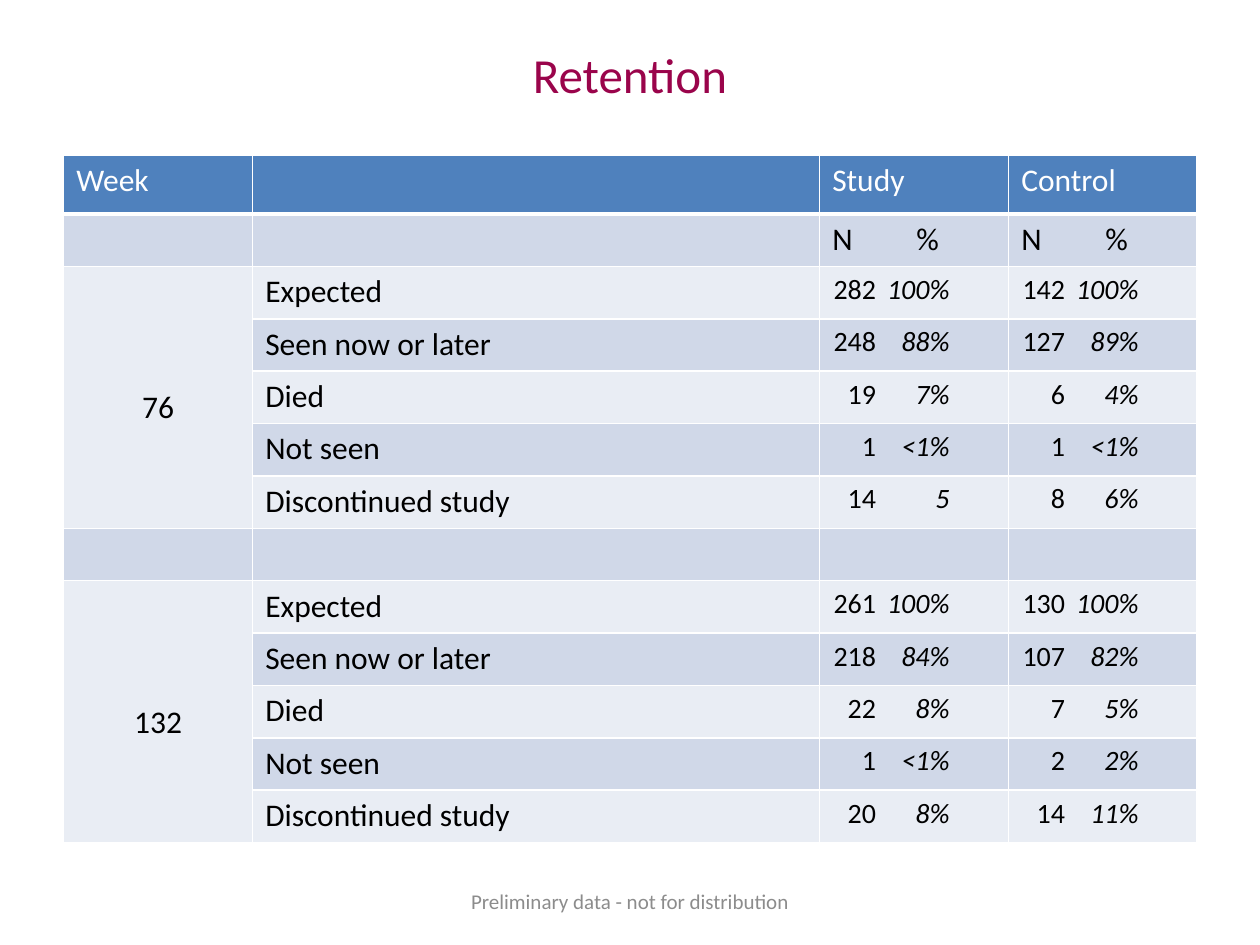
import pptx
import pptx.util
import pptx.dml.color
import pptx.enum.text
import pptx.oxml
import pptx.oxml.ns

Pt = pptx.util.Pt
Align = pptx.enum.text.PP_ALIGN
Anchor = pptx.enum.text.MSO_ANCHOR

FONT = "Calibri"
BLACK, WHITE = "000000", "FFFFFF"
HEADER_FILL = "4F81BD"
BAND_FILLS = ["E9EDF4", "D0D8E8"]
HEADER_HEIGHT, ROW_HEIGHT = 33.7, 29.95
COLUMN_SHARES = [1.5, 4.5, 1.5, 1.49]
NUMBER_STOPS = [(25, "r"), (67, "r")]
HEADING_STOPS = [(48, "l")]

OUTCOMES = ["Expected", "Seen now or later", "Died", "Not seen", "Discontinued study"]
WEEKS = {
    "76": (
        [("282", "100%"), ("248", "88%"), ("19", "7%"), ("1", "<1%"), ("14", "5")],
        [("142", "100%"), ("127", "89%"), ("6", "4%"), ("1", "<1%"), ("8", "6%")],
    ),
    "132": (
        [("261", "100%"), ("218", "84%"), ("22", "8%"), ("1", "<1%"), ("20", "8%")],
        [("130", "100%"), ("107", "82%"), ("7", "5%"), ("2", "2%"), ("14", "11%")],
    ),
}


def color(value):
    return pptx.dml.color.RGBColor.from_string(value)


def style(para, size, ink, align=Align.LEFT):
    para.alignment = align
    para.font.name = FONT
    para.font.size = Pt(size)
    para.font.bold = False
    para.font.color.rgb = color(ink)


def add_line(page, box, text, size, ink, anchor):
    shape = page.shapes.add_textbox(*(Pt(length) for length in box))
    frame = shape.text_frame
    frame.word_wrap = True
    frame.vertical_anchor = anchor
    para = frame.paragraphs[0]
    para.text = text
    style(para, size, ink, Align.CENTER)


def set_stops(para, stops):
    tabs = "".join(f'<a:tab pos="{Pt(pos)}" algn="{side}"/>' for pos, side in stops)
    namespace = pptx.oxml.ns.nsdecls("a")
    tab_list = pptx.oxml.parse_xml(f"<a:tabLst {namespace}>{tabs}</a:tabLst>")
    para._p.get_or_add_pPr().append(tab_list)


def dress_cell(cell, fill, top, bottom):
    properties = cell._tc.get_or_add_tcPr()
    for side, width in (("L", 1), ("R", 1), ("T", top), ("B", bottom)):
        properties.append(pptx.oxml.parse_xml(
            f'<a:ln{side} {pptx.oxml.ns.nsdecls("a")} w="{Pt(width)}"><a:solidFill>'
            f'<a:srgbClr val="{WHITE}"/></a:solidFill></a:ln{side}>'))
    cell.fill.solid()
    cell.fill.fore_color.rgb = color(fill)


def write(cell, text, ink=BLACK, align=Align.LEFT):
    para = cell.text_frame.paragraphs[0]
    para.text = text
    style(para, 18, ink, align)
    return para


def write_count(cell, count, percent):
    para = cell.text_frame.paragraphs[0]
    style(para, 16, BLACK)
    set_stops(para, NUMBER_STOPS)
    para.add_run().text = f"\t{count}\t"
    span = para.add_run()
    span.text = percent
    span.font.italic = True


def write_week(table, first, week, arms):
    last = first + len(OUTCOMES) - 1
    label = table.cell(first, 0)
    label.merge(table.cell(last, 0))
    label.vertical_anchor = Anchor.MIDDLE
    label.margin_top = Pt(16)
    write(label, week, align=Align.CENTER)
    for offset, outcome in enumerate(OUTCOMES):
        write(table.cell(first + offset, 1), outcome)
        for column, counts in enumerate(arms, start=2):
            write_count(table.cell(first + offset, column), *counts[offset])


def add_retention_table(page, box):
    block = len(OUTCOMES) + 1
    row_count = 1 + block * len(WEEKS)
    frame = page.shapes.add_table(
        row_count, len(COLUMN_SHARES), *(Pt(length) for length in box))
    table = frame.table
    for column, share in zip(table.columns, COLUMN_SHARES):
        column.width = Pt(box[2] * share / sum(COLUMN_SHARES))
    for index, row in enumerate(table.rows):
        row.height = Pt(ROW_HEIGHT if index else HEADER_HEIGHT)
        for cell in row.cells:
            fill = BAND_FILLS[index % 2] if index else HEADER_FILL
            dress_cell(cell, fill, 3 if index == 1 else 1, 1 if index else 3)
    for column, heading in ((0, "Week"), (2, "Study"), (3, "Control")):
        write(table.cell(0, column), heading, WHITE)
    for column in (2, 3):
        set_stops(write(table.cell(1, column), "N\t%"), HEADING_STOPS)
    for index, (week, arms) in enumerate(WEEKS.items()):
        write_week(table, 2 + index * block, week, arms)


def main():
    deck = pptx.Presentation()
    deck.slide_width, deck.slide_height = Pt(720), Pt(540)
    page = deck.slides.add_slide(deck.slide_layouts[6])
    add_line(page, (36, 21.6, 648, 90), "Retention", 28, "9A044B", Anchor.TOP)
    add_retention_table(page, (36.4, 88.6, 647.3, 393.1))
    add_line(page, (246, 500.5, 228, 28.8), "Preliminary data - not for distribution",
             12, "8C8C8C", Anchor.MIDDLE)
    deck.save("out.pptx")


if __name__ == "__main__":
    main()
